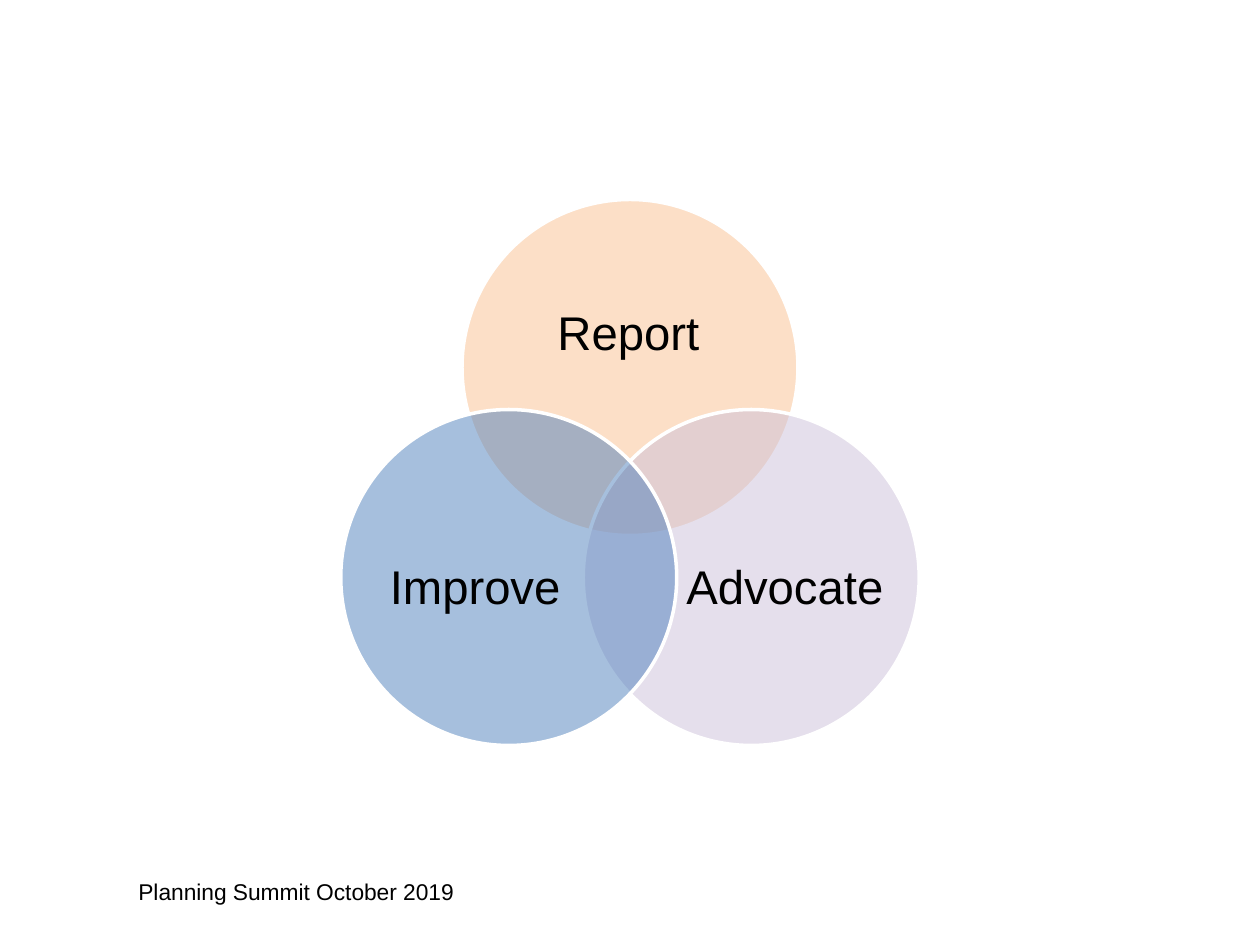
import math

from lxml import etree
from pptx import Presentation
from pptx.dml.color import RGBColor
from pptx.enum.shapes import MSO_SHAPE
from pptx.enum.text import MSO_ANCHOR, PP_ALIGN
from pptx.oxml.ns import qn
from pptx.util import Pt

ORANGE = RGBColor(0xFA, 0xC0, 0x90)
LAVENDER = RGBColor(0xCC, 0xC1, 0xDA)
BLUE = RGBColor(0x4F, 0x81, 0xBD)
WHITE = RGBColor(0xFF, 0xFF, 0xFF)
BLACK = RGBColor(0x00, 0x00, 0x00)
FONT = "Arial"
OVAL = MSO_SHAPE.OVAL
MIDDLE = MSO_ANCHOR.MIDDLE
CENTER = PP_ALIGN.CENTER

TOP_LABEL = (0.13, 0.18, 0.73, 0.45)
RIGHT_LABEL = (0.3, 0.26, 0.6, 0.55)
LEFT_LABEL = (0.1, 0.26, 0.6, 0.55)
CIRCLES = [
    ("Report", ORANGE, -90, TOP_LABEL),
    ("Advocate", LAVENDER, 30, RIGHT_LABEL),
    ("Improve", BLUE, 150, LEFT_LABEL),
]


def add_text(slide, text, left, top, width, height, size):
    shape = slide.shapes.add_textbox(Pt(left), Pt(top), Pt(width), Pt(height))
    frame = shape.text_frame
    frame.word_wrap = True
    paragraph = frame.paragraphs[0]
    paragraph.text = text
    paragraph.font.name = FONT
    paragraph.font.size = Pt(size)
    paragraph.font.color.rgb = BLACK
    return frame


def add_circle(slide, color, left, top, diameter):
    shape = slide.shapes.add_shape(OVAL, Pt(left), Pt(top), Pt(diameter), Pt(diameter))
    shape.shadow.inherit = False
    shape.fill.solid()
    shape.fill.fore_color.rgb = color
    color_element = shape.fill._xPr.find(qn("a:solidFill"))[0]
    etree.SubElement(color_element, qn("a:alpha"), val="50000")
    shape.line.color.rgb = WHITE
    shape.line.width = Pt(2)


def add_label(slide, text, left, top, width, height):
    frame = add_text(slide, text, left, top, width, height, 27)
    frame.margin_left = frame.margin_right = 0
    frame.margin_top = frame.margin_bottom = 0
    frame.vertical_anchor = MIDDLE
    frame.paragraphs[0].alignment = CENTER
    frame.paragraphs[0].line_spacing = 0.9


def add_venn(slide, left, top, width, height):
    diameter = height / 1.625
    orbit = (height - diameter) / 1.5
    center_x = left + width / 2
    center_y = top + diameter / 2 + orbit
    for text, color, degrees, label in CIRCLES:
        angle = math.radians(degrees)
        circle_left = center_x + orbit * math.cos(angle) - diameter / 2
        circle_top = center_y + orbit * math.sin(angle) - diameter / 2
        label_x, label_y, label_width, label_height = (part * diameter for part in label)
        add_circle(slide, color, circle_left, circle_top, diameter)
        add_label(slide, text, circle_left + label_x, circle_top + label_y,
                  label_width, label_height)


def add_footer(slide, left, top, width, height):
    add_text(slide, "Planning Summit October 2019", left, top, width, height, 13)


def main():
    presentation = Presentation()
    presentation.slide_width = Pt(720)
    presentation.slide_height = Pt(540)
    slide = presentation.slides.add_slide(presentation.slide_layouts[6])
    add_footer(slide, 72, 498, 396, 29)
    add_venn(slide, 194, 114, 332, 312)
    presentation.save("out.pptx")


if __name__ == "__main__":
    main()
